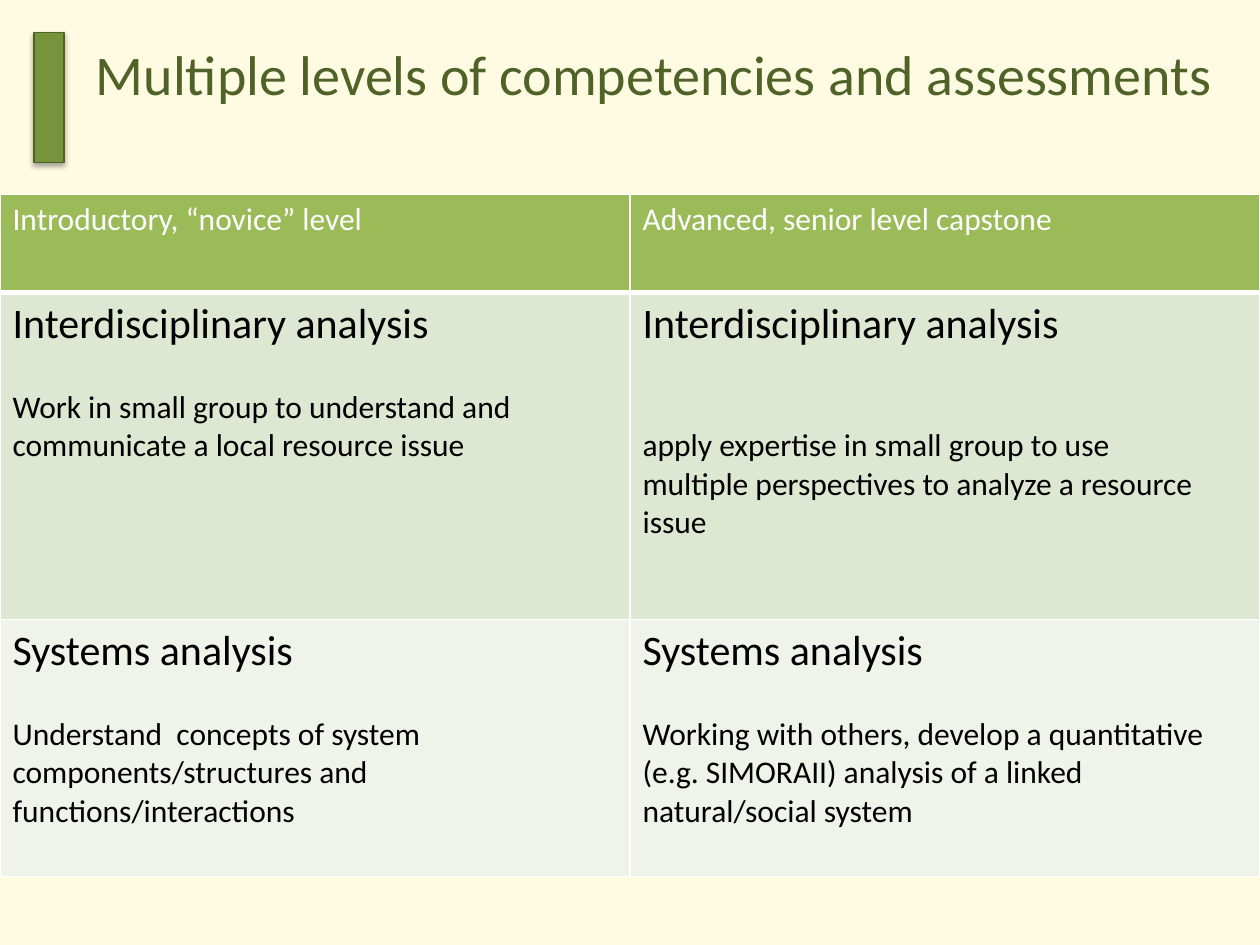
from lxml.etree import SubElement as Sub
from pptx import Presentation
from pptx.dml.color import RGBColor as Rgb
from pptx.enum.shapes import MSO_SHAPE as Shape
from pptx.enum.text import MSO_ANCHOR as Anchor, MSO_AUTO_SIZE as Fit, PP_ALIGN as Align
from pptx.oxml.ns import qn
from pptx.util import Pt

FONT = "Calibri"
WIDE, HIGH = 720, 540
ROWS = [56, 187, 147]
FILLS = ["9BBB59", "DEE7D1", "EFF3EA"]
HEAD = {"size": 18, "tint": "FFFFFF"}
LEAD = {"size": 24, "tint": "000000"}
BODY = {"size": 18, "tint": "000000", "gap": 22}
LOW = {**BODY, "gap": 44}
CELLS = [
    [
        [("Introductory, “novice” level", HEAD)],
        [("Advanced, senior level capstone", HEAD)],
    ],
    [
        [
            ("Interdisciplinary analysis", LEAD),
            ("Work in small group to understand and communicate a local resource issue", BODY),
        ],
        [
            ("Interdisciplinary analysis", LEAD),
            ("apply expertise in small group to use\vmultiple perspectives to analyze a resource issue", LOW),
        ],
    ],
    [
        [
            ("Systems analysis", LEAD),
            ("Understand  concepts of system components/structures and functions/interactions", BODY),
        ],
        [
            ("Systems analysis", LEAD),
            ("Working with others, develop a quantitative (e.g. SIMORAII) analysis of a linked natural/social system", BODY),
        ],
    ],
]


def tint(code):
    """Turn a hex string into a colour."""
    return Rgb.from_string(code)


def apply(item, form):
    """Set each attribute named in a dict."""
    for name, value in form.items():
        setattr(item, name, value)


def paint(item, code):
    """Give an item a solid fill."""
    item.fill.solid()
    item.fill.fore_color.rgb = tint(code)


def write(para, text, form):
    """Put styled text into a paragraph."""
    para.text = text
    apply(para, {"alignment": Align.LEFT, "space_before": Pt(form.get("gap", 0))})
    for run in para.runs:
        apply(run.font, {"name": FONT, "size": Pt(form["size"]), "bold": False})
        run.font.color.rgb = tint(form["tint"])


def add_title(slide, text):
    """Place the slide title."""
    title = slide.shapes.title
    apply(title, {"left": Pt(47.5), "top": Pt(18.7), "width": Pt(672.5), "height": Pt(106.5)})
    frame = title.text_frame
    apply(frame, {"word_wrap": True, "auto_size": Fit.NONE, "vertical_anchor": Anchor.TOP})
    write(frame.paragraphs[0], text, {"size": 32, "tint": "4F6228"})


def add_bar(slide):
    """Draw the accent bar with its soft shadow."""
    bar = slide.shapes.add_shape(Shape.RECTANGLE, Pt(19.4), Pt(18.7), Pt(17.3), Pt(74.2))
    paint(bar, "77933C")
    bar.line.color.rgb = tint("4F6228")
    bar.line.width = Pt(0.75)
    bar.shadow.inherit = False
    glow = bar.element.spPr.find(qn("a:effectLst"))
    form = {"blurRad": Pt(3.1), "dist": Pt(1.8), "dir": 90 * 60000, "rotWithShape": 0}
    shade = Sub(glow, qn("a:outerShdw"), {key: str(val) for key, val in form.items()})
    black = Sub(shade, qn("a:srgbClr"), val="000000")
    Sub(black, qn("a:alpha"), val="35000")


def edge(cell, base):
    """Draw white borders round a cell."""
    props = cell._tc.get_or_add_tcPr()
    for side, width in {"L": 1, "R": 1, "T": 1, "B": base}.items():
        line = Sub(props, qn(f"a:ln{side}"), w=str(Pt(width)))
        Sub(Sub(line, qn("a:solidFill")), qn("a:srgbClr"), val="FFFFFF")


def fill_cell(cell, parts, code, base):
    """Write, border and colour one cell."""
    frame = cell.text_frame
    for num, (text, form) in enumerate(parts):
        para = frame.add_paragraph() if num else frame.paragraphs[0]
        write(para, text, form)
    edge(cell, base)
    paint(cell, code)


def add_grid(slide):
    """Build the table of levels."""
    grid = slide.shapes.add_table(
        len(ROWS), 2, Pt(0), Pt(111), Pt(WIDE), Pt(sum(ROWS))
    ).table
    for num, (high, code, cells) in enumerate(zip(ROWS, FILLS, CELLS)):
        grid.rows[num].height = Pt(high)
        for col, parts in enumerate(cells):
            fill_cell(grid.cell(num, col), parts, code, 1 if num else 3)


def main():
    """Build and save the slide."""
    deck = Presentation()
    apply(deck, {"slide_width": Pt(WIDE), "slide_height": Pt(HIGH)})
    slide = deck.slides.add_slide(deck.slide_layouts[5])
    paint(slide.background, "FFFAE2")
    add_bar(slide)
    add_title(slide, "Multiple levels of competencies and assessments")
    add_grid(slide)
    deck.save("out.pptx")


if __name__ == "__main__":
    main()
